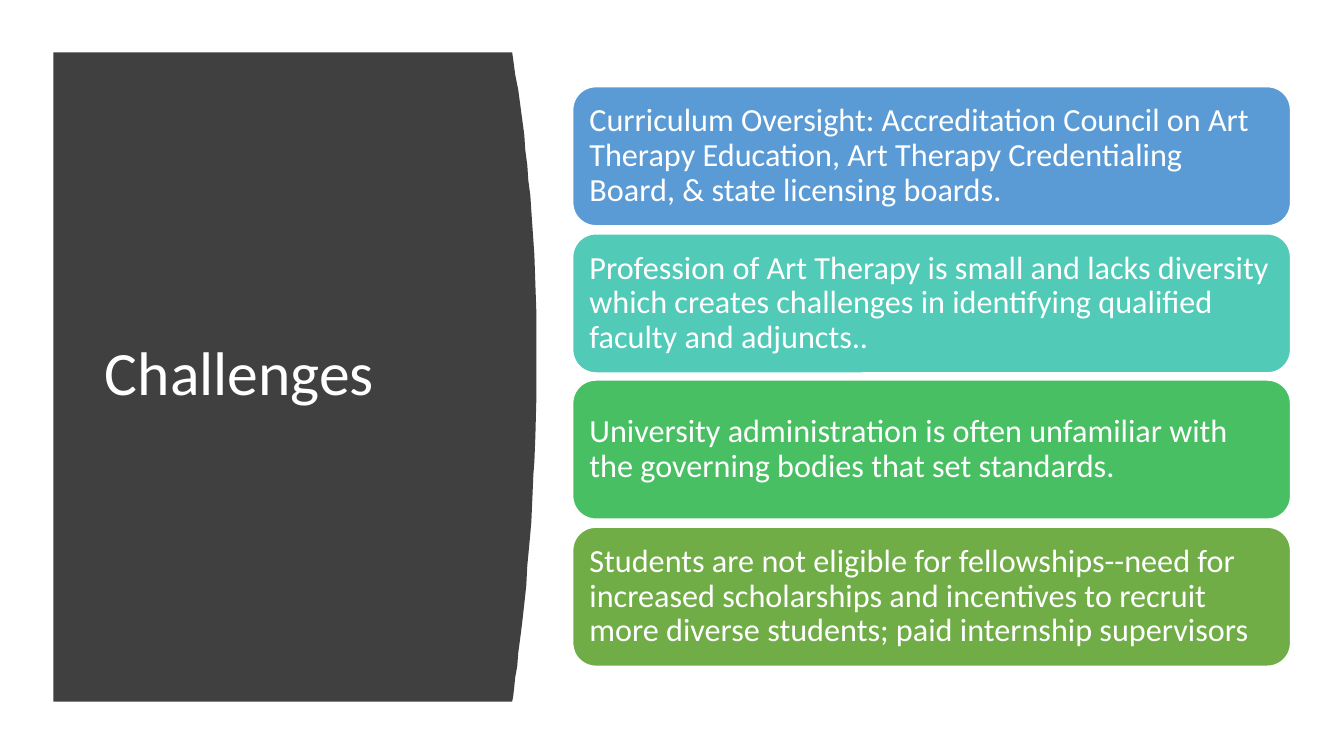
from pptx import Presentation
from pptx.dml.color import RGBColor
from pptx.enum.shapes import MSO_SHAPE as SHAPE
from pptx.enum.text import MSO_ANCHOR as ANCHOR, MSO_AUTO_SIZE as AUTO, PP_ALIGN as ALIGN
from pptx.util import Emu, Pt

WHITE = RGBColor(0xFF, 0xFF, 0xFF)
CHARCOAL = RGBColor(0x40, 0x40, 0x40)
BLUE = RGBColor(0x5B, 0x9B, 0xD5)
TEAL = RGBColor(0x52, 0xCA, 0xB8)
GREEN = RGBColor(0x49, 0xBF, 0x64)
OLIVE = RGBColor(0x70, 0xAD, 0x47)

PX = 9144
CARD_TOP, CARD_PITCH = 86, 145.67

PANEL_OUTLINE = [
    (53, 52), (508, 52), (509, 59), (511, 74), (514, 89), (516, 104),
    (518, 119), (520, 134), (521, 149), (523, 164), (524, 179), (526, 194),
    (527, 209), (528, 224), (529, 238), (530, 253), (531, 282), (532, 311),
    (532, 394), (531, 433), (530, 458), (529, 471), (528, 495), (527, 518),
    (525, 540), (523, 561), (522, 581), (520, 599), (518, 617), (516, 633),
    (514, 648), (513, 661), (511, 672), (510, 682), (509, 691), (508, 696),
    (53, 696),
]

CARDS = [
    (BLUE, "Curriculum Oversight: Accreditation Council on Art Therapy Education, "
           "Art Therapy Credentialing Board, & state licensing boards."),
    (TEAL, "Profession of Art Therapy is small and lacks diversity which creates "
           "challenges in identifying qualified faculty and adjuncts.."),
    (GREEN, "University administration is often unfamiliar with the governing "
            "bodies that set standards."),
    (OLIVE, "Students are not eligible for fellowships--need for increased "
            "scholarships and incentives to recruit more diverse students; "
            "paid internship supervisors"),
]


def px(n):
    return Emu(n * PX)


class Deck:
    font = "Calibri"

    def __init__(self, width, height):
        self.prs = Presentation()
        self.prs.slide_width, self.prs.slide_height = px(width), px(height)
        self.s = self.prs.slides.add_slide(self.prs.slide_layouts[5])

    def set_text(self, sp, text, size):
        tf = sp.text_frame
        tf.text = text
        tf.word_wrap = True
        tf.auto_size = AUTO.NONE
        tf.vertical_anchor = ANCHOR.MIDDLE
        tf.margin_left = tf.margin_right = tf.margin_top = tf.margin_bottom = px(10)
        p = tf.paragraphs[0]
        p.alignment = ALIGN.LEFT
        p.line_spacing = 0.9
        r = p.runs[0]
        r.font.name = self.font
        r.font.size = Pt(size)
        r.font.color.rgb = WHITE

    def panel(self, outline, color):
        fb = self.s.shapes.build_freeform(*outline[0], scale=PX)
        fb.add_line_segments(outline[1:], close=True)
        sp = fb.convert_to_shape()
        sp.shadow.inherit = False
        sp.fill.solid()
        sp.fill.fore_color.rgb = color
        sp.line.fill.background()
        return sp

    def title(self, text, x, y, w, h, behind):
        sp = self.s.shapes.title
        sp.left, sp.top, sp.width, sp.height = map(px, (x, y, w, h))
        self.set_text(sp, text, 44)
        behind.element.addnext(sp.element)

    def card(self, text, color, x, y, w, h):
        sp = self.s.shapes.add_shape(SHAPE.ROUNDED_RECTANGLE, *map(px, (x, y, w, h)))
        sp.shadow.inherit = False
        sp.fill.solid()
        sp.fill.fore_color.rgb = color
        sp.line.color.rgb = WHITE
        sp.line.width = Pt(1)
        self.set_text(sp, text, 23)


def main():
    deck = Deck(1333, 750)
    panel = deck.panel(PANEL_OUTLINE, CHARCOAL)
    deck.title("Challenges", 94, 111, 374, 524, behind=panel)
    for i, (color, text) in enumerate(CARDS):
        deck.card(text, color, 568, round(CARD_TOP + i * CARD_PITCH), 712, 138)
    deck.prs.save("out.pptx")


if __name__ == "__main__":
    main()
